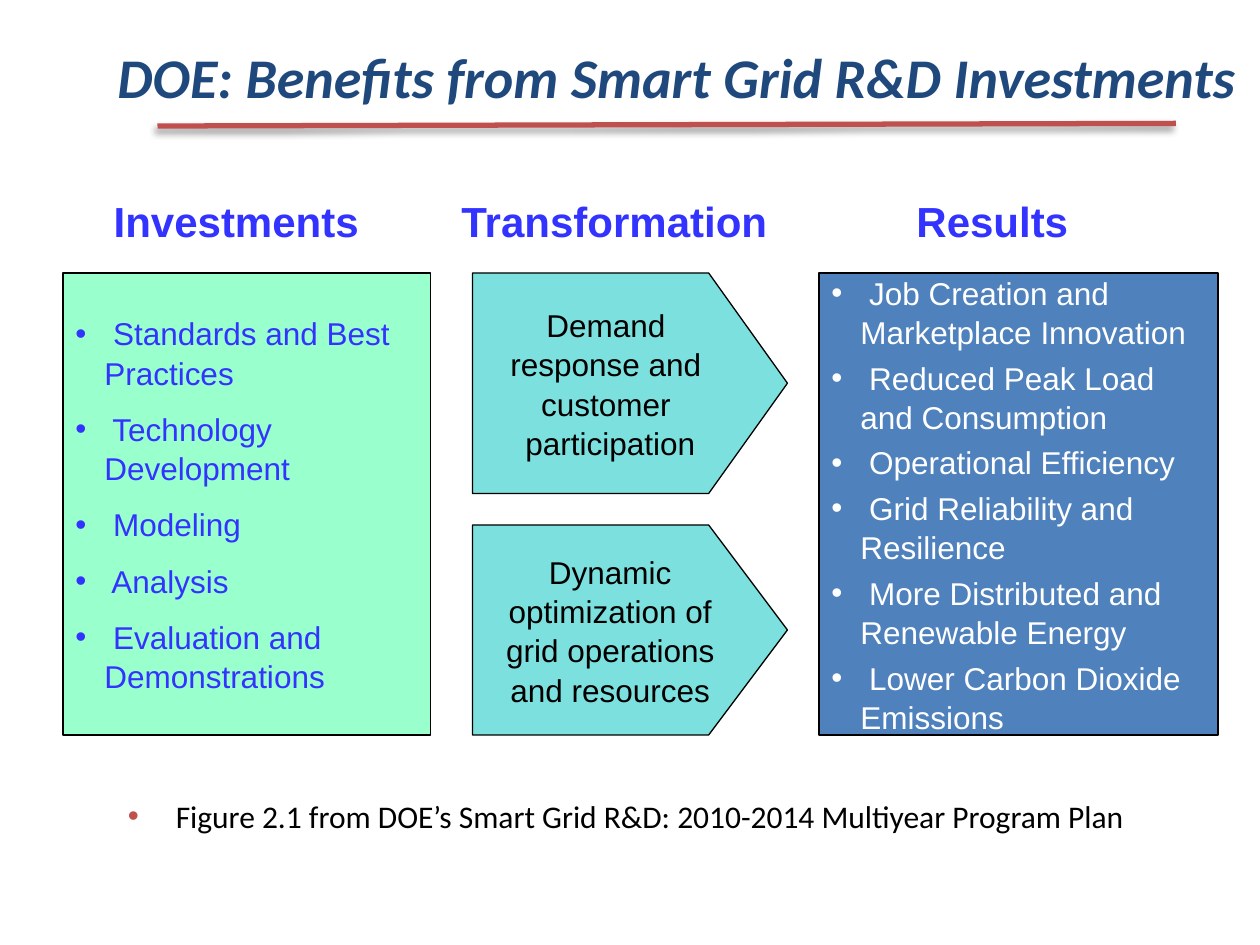
"""Build the slide on the benefits of smart grid R&D investments."""
from dataclasses import dataclass
from typing import Optional

from lxml import etree
from pptx import Presentation
from pptx.dml.color import RGBColor
from pptx.enum.shapes import MSO_CONNECTOR, MSO_SHAPE
from pptx.enum.text import MSO_ANCHOR, PP_ALIGN
from pptx.oxml import parse_xml
from pptx.oxml.ns import nsdecls, qn
from pptx.util import Inches, Pt

CENTER, LEFT = PP_ALIGN.CENTER, PP_ALIGN.LEFT
MIDDLE, TOP = MSO_ANCHOR.MIDDLE, MSO_ANCHOR.TOP
PENTAGON, RECTANGLE = MSO_SHAPE.PENTAGON, MSO_SHAPE.RECTANGLE
STRAIGHT = MSO_CONNECTOR.STRAIGHT

COLORS = {
    "navy": "1F497D", "red": "C0504D", "black": "000000", "white": "FFFFFF",
    "violet": "3333FF", "mint": "99FFCC", "aqua": "7CE0DE", "blue": "4F81BD",
}
CELLS_PER_INCH = 12
PANEL_TOP, PANEL_ROWS = 26, 44
HEADING_TOP, HEADING_COLS, HEADING_ROWS = 17, 33, 8
ARROW_LEFT, ARROW_COLS, ARROW_TIP = 45, 30, 7.5


@dataclass(frozen=True)
class Area:
    col: float
    row: float
    cols: float
    rows: float


@dataclass(frozen=True)
class Style:
    size: float
    color: str
    font: str = "Arial"
    bold: bool = False
    italic: bool = False
    align: int = LEFT
    spacing: float = 1.0
    gap: float = 0


@dataclass(frozen=True)
class Bullet:
    color: str
    hang: float


@dataclass(frozen=True)
class Label:
    area: Area
    text: str
    style: Style
    anchor: int = MIDDLE
    wrap: bool = True
    bullet: Optional[Bullet] = None


@dataclass(frozen=True)
class Panel:
    area: Area
    fill: str
    items: tuple[str, ...]
    style: Style


@dataclass(frozen=True)
class Arrow:
    row: float
    rows: float
    lines: tuple[str, ...]


HEADING = Style(24, "violet", bold=True, align=CENTER)
ARROW_STYLE = Style(18, "black", align=CENTER, spacing=1.04)

LABELS = [
    Label(Area(10, 2.75, 110, 9), "DOE: Benefits from Smart Grid R&D Investments",
          Style(32, "navy", "Calibri", bold=True, italic=True)),
    Label(Area(11, 76, 99, 4.5),
          "Figure 2.1 from DOE’s Smart Grid R&D: 2010-2014 Multiyear Program Plan",
          Style(18, "black", "Calibri", spacing=0.8), TOP, bullet=Bullet("red", 0.38)),
] + [
    Label(Area(col, HEADING_TOP, HEADING_COLS, HEADING_ROWS), text, HEADING, wrap=False)
    for col, text in ((6, "Investments"), (42, "Transformation"), (78, "Results"))
]
ARROWS = [
    Arrow(26, 21, ("Demand ", "response and ", "customer ", "participation")),
    Arrow(50, 20, ("Dynamic", "optimization of", "grid operations", "and resources")),
]
PANELS = [
    Panel(Area(78, PANEL_TOP, 38, PANEL_ROWS), "blue", (
        " Job Creation and Marketplace Innovation",
        " Reduced Peak Load and Consumption",
        " Operational Efficiency",
        " Grid Reliability and Resilience",
        " More Distributed and Renewable Energy",
        " Lower Carbon Dioxide Emissions",
    ), Style(18, "white", spacing=1.04, gap=3.6)),
    Panel(Area(6, PANEL_TOP, 35, PANEL_ROWS), "mint", (
        " Standards and Best Practices",
        " Technology Development",
        " Modeling",
        " Analysis",
        " Evaluation and Demonstrations",
    ), Style(18, "violet", spacing=1.04, gap=9.7)),
]


def rgb(name: str) -> RGBColor:
    return RGBColor.from_string(COLORS[name])


def cells(count: float) -> int:
    return Inches(count / CELLS_PER_INCH)


def place(area: Area) -> tuple[int, ...]:
    return tuple(cells(n) for n in (area.col, area.row, area.cols, area.rows))


def add_bullet(paragraph, bullet: Bullet) -> None:
    properties = paragraph._p.get_or_add_pPr()
    properties.set("marL", str(Inches(bullet.hang)))
    properties.set("indent", str(-Inches(bullet.hang)))
    tint = etree.SubElement(properties, qn("a:buClr"))
    etree.SubElement(tint, qn("a:srgbClr"), val=COLORS[bullet.color])
    etree.SubElement(properties, qn("a:buFont"), typeface="Arial")
    etree.SubElement(properties, qn("a:buChar"), char="•")


def add_run(paragraph, text: str, style: Style) -> None:
    run = paragraph.add_run()
    run.text = text
    run.font.name, run.font.size = style.font, Pt(style.size)
    run.font.bold, run.font.italic = style.bold, style.italic
    run.font.color.rgb = rgb(style.color)


def write(frame, paragraphs: list[tuple[str, ...]], style: Style, anchor: int = MIDDLE,
          wrap: bool = True, bullet: Optional[Bullet] = None) -> None:
    frame.word_wrap, frame.vertical_anchor = wrap, anchor
    for index, lines in enumerate(paragraphs):
        paragraph = frame.add_paragraph() if index else frame.paragraphs[0]
        if bullet:
            add_bullet(paragraph, bullet)
        paragraph.alignment, paragraph.line_spacing = style.align, style.spacing
        if index:
            paragraph.space_before = Pt(style.gap)
        for position, line in enumerate(lines):
            if position:
                paragraph.add_line_break()
            add_run(paragraph, line, style)


def add_block(slide, preset: int, area: Area, fill: str):
    block = slide.shapes.add_shape(preset, *place(area))
    block.shadow.inherit = False
    block.fill.solid()
    block.fill.fore_color.rgb = rgb(fill)
    block.line.color.rgb = rgb("black")
    block.line.width = Pt(0.75)
    return block


def draw_rule(slide) -> None:
    rule = slide.shapes.add_connector(STRAIGHT, *map(cells, (15, 12, 112, 11.75)))
    rule.line.color.rgb = rgb("red")
    rule.line.width = Pt(3)
    rule._element.spPr.append(parse_xml(
        f'<a:effectLst {nsdecls("a")}><a:outerShdw blurRad="{Pt(4)}" dist="{Pt(3)}" '
        f'dir="{135 * 60000}" rotWithShape="0"><a:srgbClr val="{COLORS["black"]}">'
        '<a:alpha val="40000"/></a:srgbClr></a:outerShdw></a:effectLst>'))


def draw_label(slide, label: Label) -> None:
    box = slide.shapes.add_textbox(*place(label.area))
    write(box.text_frame, [(label.text,)], label.style, label.anchor, label.wrap, label.bullet)


def draw_arrow(slide, arrow: Arrow) -> None:
    area = Area(ARROW_LEFT, arrow.row, ARROW_COLS, arrow.rows)
    block = add_block(slide, PENTAGON, area, "aqua")
    block.adjustments[0] = ARROW_TIP / arrow.rows
    write(block.text_frame, [arrow.lines], ARROW_STYLE, wrap=False)


def draw_panel(slide, panel: Panel) -> None:
    block = add_block(slide, RECTANGLE, panel.area, panel.fill)
    write(block.text_frame, [(item,) for item in panel.items], panel.style,
          bullet=Bullet(panel.style.color, 0.23))


def main() -> None:
    deck = Presentation()
    deck.slide_width, deck.slide_height = cells(120), cells(90)
    slide = deck.slides.add_slide(deck.slide_layouts[6])
    draw_rule(slide)
    for draw, parts in ((draw_label, LABELS), (draw_arrow, ARROWS), (draw_panel, PANELS)):
        for part in parts:
            draw(slide, part)
    deck.save("out.pptx")


if __name__ == "__main__":
    main()
